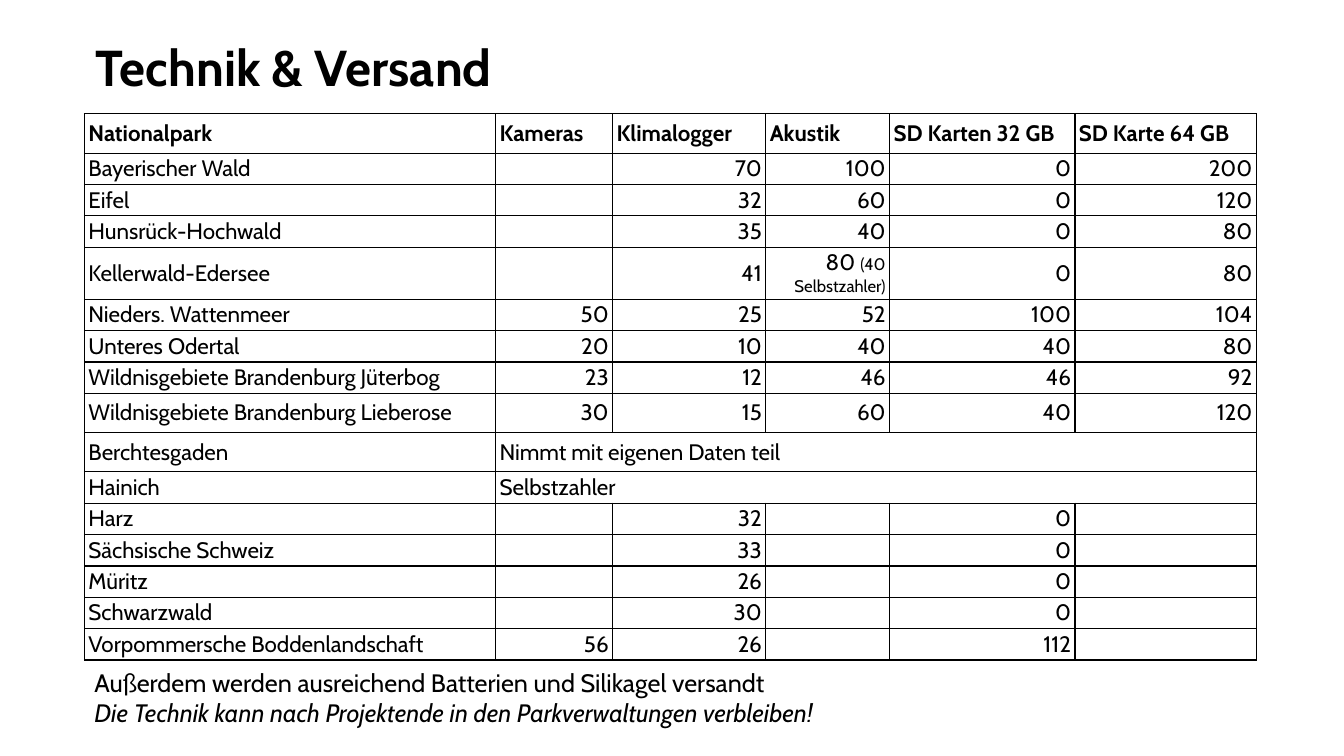
from dataclasses import dataclass

from lxml import etree
from pptx import Presentation
from pptx import util as u
from pptx.dml.color import RGBColor
from pptx.enum import text
from pptx.oxml.ns import qn

COLORS = {"text": "000000", "border": "000000", "background": "FFFFFF"}
FONT = "Cabin"
TABLE_SIZE = 16
NOTE_SIZE = 12
COLUMN_WIDTHS = (10.36, 2.95, 3.86, 3.12, 4.67, 4.57)
LOW, TALL, DOUBLE = 0.79, 0.99, 1.31


@dataclass(frozen=True)
class ParkRow:
    name: str
    values: tuple[str, ...] = ()
    height: float = LOW
    remark: str = ""
    acoustics_note: str = ""
    header: bool = False


ROWS = (
    ParkRow("Nationalpark", ("Kameras", "Klimalogger", "Akustik", "SD Karten 32 GB", "SD Karte 64 GB"),
            TALL, header=True),
    ParkRow("Bayerischer Wald", ("", "70", "100", "0", "200")),
    ParkRow("Eifel", ("", "32", "60", "0", "120")),
    ParkRow("Hunsrück-Hochwald", ("", "35", "40", "0", "80")),
    ParkRow("Kellerwald-Edersee", ("", "41", "80 ", "0", "80"), DOUBLE,
            acoustics_note="(40 Selbstzahler)"),
    ParkRow("Nieders. Wattenmeer", ("50", "25", "52", "100", "104")),
    ParkRow("Unteres Odertal", ("20", "10", "40", "40", "80")),
    ParkRow("Wildnisgebiete Brandenburg Jüterbog", ("23", "12", "46", "46", "92")),
    ParkRow("Wildnisgebiete Brandenburg Lieberose", ("30", "15", "60", "40", "120"), TALL),
    ParkRow("Berchtesgaden", height=TALL, remark="Nimmt mit eigenen Daten teil"),
    ParkRow("Hainich", remark="Selbstzahler"),
    ParkRow("Harz", ("", "32", "", "0", "")),
    ParkRow("Sächsische Schweiz", ("", "33", "", "0", "")),
    ParkRow("Müritz", ("", "26", "", "0", "")),
    ParkRow("Schwarzwald", ("", "30", "", "0", "")),
    ParkRow("Vorpommersche Boddenlandschaft", ("56", "26", "", "112", "")),
)


def color(role: str) -> RGBColor:
    return RGBColor.from_string(COLORS[role])


def set_font(paragraph, size: float, bold: bool = False, italic: bool = False) -> None:
    font = paragraph.font
    font.name, font.size, font.bold, font.italic = FONT, u.Pt(size), bold, italic
    font.color.rgb = color("text")


def place(shape, left: float, top: float, width: float, height: float) -> None:
    shape.left, shape.top = u.Cm(left), u.Cm(top)
    shape.width, shape.height = u.Cm(width), u.Cm(height)


def draw_borders(cell) -> None:
    properties = cell._tc.get_or_add_tcPr()
    for index, side in enumerate(("lnL", "lnR", "lnT", "lnB")):
        line = etree.Element(qn(f"a:{side}"), w=str(u.Pt(1)))
        fill = etree.SubElement(line, qn("a:solidFill"))
        etree.SubElement(fill, qn("a:srgbClr"), val=COLORS["border"])
        properties.insert(index, line)


def format_cell(cell, content: str, bold: bool = False, right: bool = False, note: str = "") -> None:
    cell.fill.background()
    draw_borders(cell)
    cell.vertical_anchor = text.MSO_ANCHOR.MIDDLE
    cell.margin_left = cell.margin_right = u.Cm(0.1)
    cell.margin_top = cell.margin_bottom = u.Cm(0.05)
    paragraph = cell.text_frame.paragraphs[0]
    paragraph.alignment = text.PP_ALIGN.RIGHT if right else text.PP_ALIGN.LEFT
    set_font(paragraph, TABLE_SIZE, bold)
    if content:
        paragraph.add_run().text = content
    else:  # keeps an empty cell from stretching its row
        etree.SubElement(paragraph._p, qn("a:endParaRPr"), sz=str(TABLE_SIZE * 100))
    if note:
        note_run = paragraph.add_run()
        note_run.text = note
        note_run.font.size = u.Pt(NOTE_SIZE)


def add_title(slide, wording: str) -> None:
    title = slide.shapes.title
    place(title, 2.16, 0.71, 27.53, 2.11)
    frame = title.text_frame
    frame.text = wording
    frame.auto_size = text.MSO_AUTO_SIZE.NONE
    frame.vertical_anchor = text.MSO_ANCHOR.MIDDLE
    heading = frame.paragraphs[0]
    heading.alignment = text.PP_ALIGN.LEFT
    heading.line_spacing = 0.9
    set_font(heading, 36, bold=True)


def add_equipment_table(slide) -> None:
    frame = slide.shapes.add_table(
        len(ROWS), len(COLUMN_WIDTHS), u.Cm(2.13), u.Cm(2.87),
        u.Cm(sum(COLUMN_WIDTHS)), u.Cm(sum(park.height for park in ROWS)))
    table = frame.table
    table.first_row = table.horz_banding = False
    for column, width in zip(table.columns, COLUMN_WIDTHS):
        column.width = u.Cm(width)
    for index, park in enumerate(ROWS):
        table.rows[index].height = u.Cm(park.height)
        format_cell(table.cell(index, 0), park.name, park.header)
        values = park.values
        if park.remark:
            table.cell(index, 1).merge(table.cell(index, len(COLUMN_WIDTHS) - 1))
            values = (park.remark, "", "", "", "")
        for column, value in enumerate(values, start=1):
            format_cell(table.cell(index, column), value, park.header,
                        right=not (park.header or park.remark),
                        note=park.acoustics_note if column == 3 else "")


def add_closing_remarks(slide) -> None:
    remarks = slide.shapes.add_textbox(u.Cm(2.13), u.Cm(16.69), u.Cm(26.72), u.Cm(1.8))
    frame = remarks.text_frame
    frame.word_wrap = True
    frame.auto_size = text.MSO_AUTO_SIZE.SHAPE_TO_FIT_TEXT
    shipping = frame.paragraphs[0]
    shipping.text = "Außerdem werden ausreichend Batterien und Silikagel versandt"
    set_font(shipping, 18)
    ownership = frame.add_paragraph()
    ownership.text = "Die Technik kann nach Projektende in den Parkverwaltungen verbleiben!"
    set_font(ownership, 18, italic=True)


def main() -> None:
    presentation = Presentation()
    presentation.slide_width, presentation.slide_height = u.Cm(33.87), u.Cm(19.05)
    slide = presentation.slides.add_slide(presentation.slide_layouts[5])
    slide.background.fill.solid()
    slide.background.fill.fore_color.rgb = color("background")
    add_title(slide, "Technik & Versand")
    add_equipment_table(slide)
    add_closing_remarks(slide)
    presentation.save("out.pptx")


if __name__ == "__main__":
    main()
